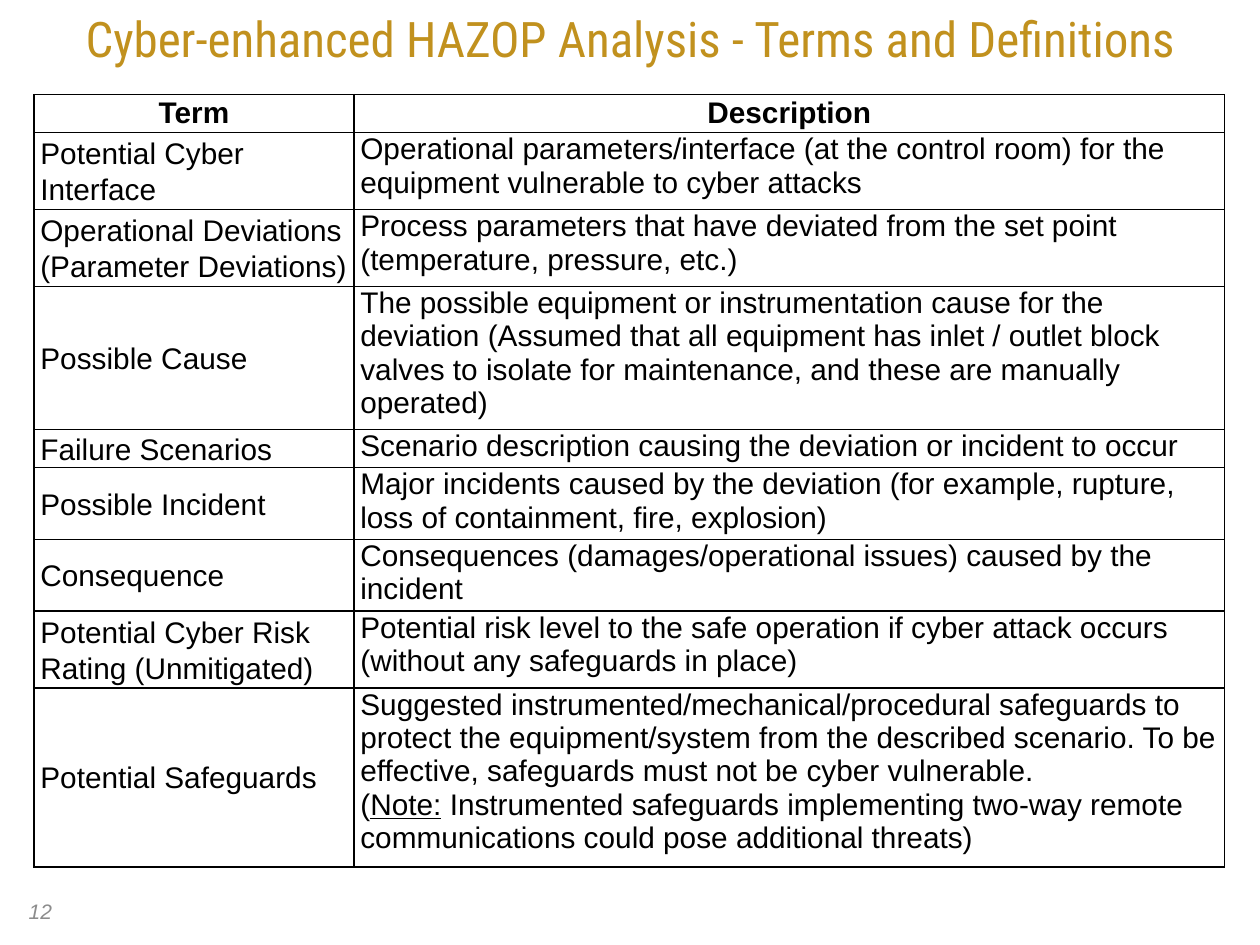
from lxml.etree import SubElement
from pptx import Presentation
from pptx.dml.color import RGBColor
from pptx.enum.text import MSO_ANCHOR, PP_ALIGN
from pptx.oxml.ns import qn
from pptx.util import Inches, Pt

BLACK = RGBColor(0x00, 0x00, 0x00)
GRAY = RGBColor(0x8C, 0x8C, 0x8C)
GOLD = RGBColor(0xC1, 0x91, 0x1E)

TITLE = "Cyber-enhanced HAZOP Analysis - Terms and Definitions"
PAGE_NUMBER = "12"
UNDERLINED = "Note:"
COLUMN_WIDTHS = (2.54, 6.91)
ROWS = [
    (0.3, "Term", ["Description"]),
    (0.61, "Potential Cyber Interface",
     ["Operational parameters/interface (at the control room) for the equipment "
      "vulnerable to cyber attacks"]),
    (0.61, "Operational Deviations (Parameter Deviations)",
     ["Process parameters that have deviated from the set point "
      "(temperature, pressure, etc.)"]),
    (1.13, "Possible Cause",
     ["The possible equipment or instrumentation cause for the deviation "
      "(Assumed that all equipment has inlet / outlet block valves to isolate "
      "for maintenance, and these are manually operated)"]),
    (0.3, "Failure Scenarios",
     ["Scenario description causing the deviation or incident to occur"]),
    (0.57, "Possible Incident",
     ["Major incidents caused by the deviation (for example, rupture, "
      "loss of containment, fire, explosion)"]),
    (0.57, "Consequence",
     ["Consequences (damages/operational issues) caused by the incident"]),
    (0.61, "Potential Cyber Risk Rating (Unmitigated)",
     ["Potential risk level to the safe operation if cyber attack occurs "
      "(without any safeguards in place)"]),
    (1.42, "Potential Safeguards",
     ["Suggested instrumented/mechanical/procedural safeguards to protect the "
      "equipment/system from the described scenario. To be effective, "
      "safeguards must not be cyber vulnerable.",
      "(Note: Instrumented safeguards implementing two-way remote "
      "communications could pose additional threats)"]),
]


def set_font(p, name, size, color, bold=False, italic=False):
    p.font.name = name
    p.font.size = Pt(size)
    p.font.color.rgb = color
    p.font.bold = bold
    p.font.italic = italic


def add_text(s, box, text, margin, anchor):
    tf = s.shapes.add_textbox(*map(Inches, box)).text_frame
    tf.word_wrap = True
    tf.vertical_anchor = anchor
    tf.margin_left = tf.margin_right = Inches(margin)
    tf.margin_top = tf.margin_bottom = Inches(margin / 2)
    p = tf.paragraphs[0]
    p.text = text
    return p


def add_borders(cell):
    tc_pr = cell._tc.get_or_add_tcPr()
    for i, side in enumerate(("lnL", "lnR", "lnT", "lnB")):
        ln = tc_pr.makeelement(qn(f"a:{side}"), {"w": str(Pt(1))})
        fill = SubElement(ln, qn("a:solidFill"))
        SubElement(fill, qn("a:srgbClr"), val=str(BLACK))
        tc_pr.insert(i, ln)


def fill_cell(cell, texts, header, term):
    cell.margin_left = cell.margin_right = Inches(0.05)
    cell.margin_top = cell.margin_bottom = 0
    cell.vertical_anchor = MSO_ANCHOR.MIDDLE if term and not header else MSO_ANCHOR.TOP
    cell.fill.background()
    add_borders(cell)
    tf = cell.text_frame
    for i, text in enumerate(texts):
        p = tf.add_paragraph() if i else tf.paragraphs[0]
        before, note, after = text.partition(UNDERLINED)
        for part in filter(None, (before, note, after)):
            r = p.add_run()
            r.text = part
            if part == UNDERLINED:
                r.font.underline = True
        if header:
            p.alignment = PP_ALIGN.CENTER
        if header or term:
            p.line_spacing = 1.07
        set_font(p, "Arial", 17, BLACK, bold=header)


def main():
    prs = Presentation()
    prs.slide_width, prs.slide_height = Inches(10), Inches(7.5)
    s = prs.slides.add_slide(prs.slide_layouts[6])

    p = add_text(s, (0.13, 7.03, 2.33, 0.4), PAGE_NUMBER, 0.1, MSO_ANCHOR.MIDDLE)
    set_font(p, "Arial", 12, GRAY, italic=True)
    p = add_text(s, (0, 0.07, 10, 0.59), TITLE, 0, MSO_ANCHOR.TOP)
    p.alignment = PP_ALIGN.CENTER
    set_font(p, "Roboto Condensed", 28, GOLD)

    height = sum(row[0] for row in ROWS)
    table = s.shapes.add_table(
        len(ROWS), len(COLUMN_WIDTHS), Inches(0.27), Inches(0.75),
        Inches(sum(COLUMN_WIDTHS)), Inches(height)).table
    table.horz_banding = False
    for column, width in zip(table.columns, COLUMN_WIDTHS):
        column.width = Inches(width)
    for i, (row_height, term, description) in enumerate(ROWS):
        table.rows[i].height = Inches(row_height)
        fill_cell(table.cell(i, 0), [term], i == 0, True)
        fill_cell(table.cell(i, 1), description, i == 0, False)

    prs.save("out.pptx")


if __name__ == "__main__":
    main()
